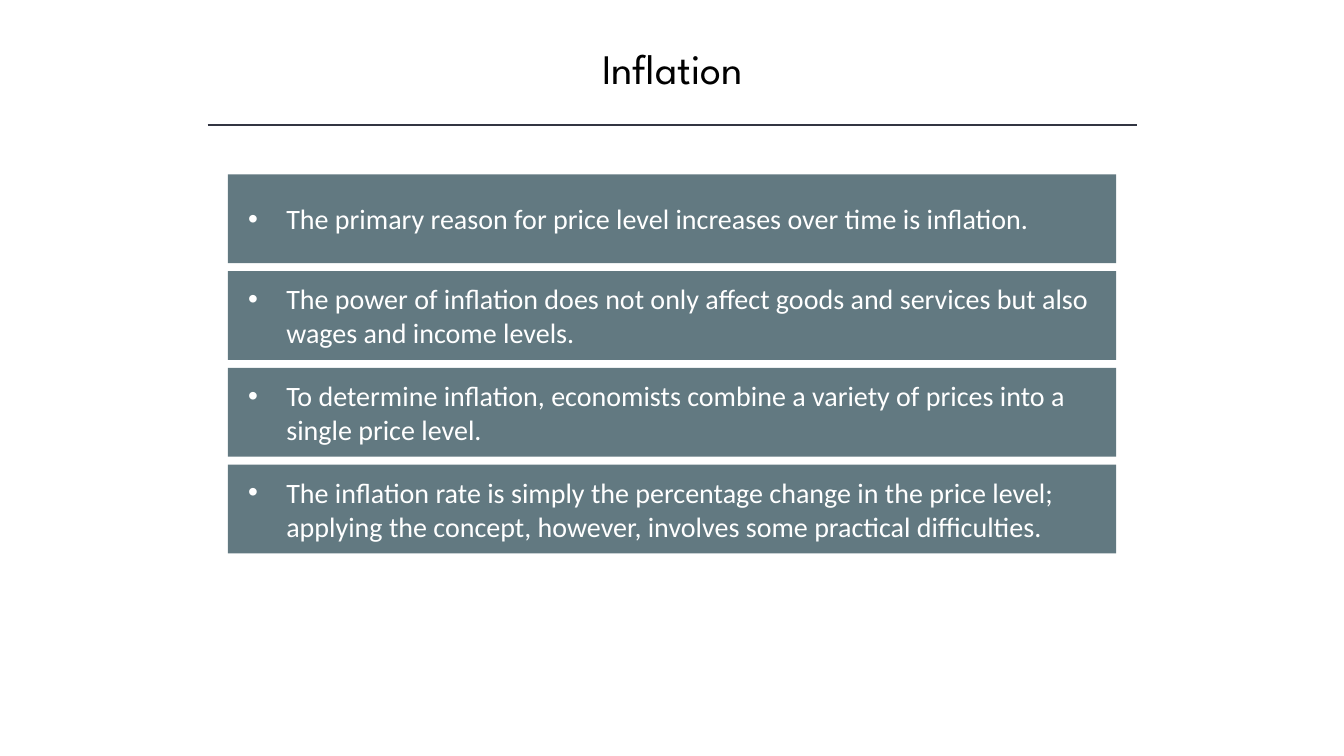
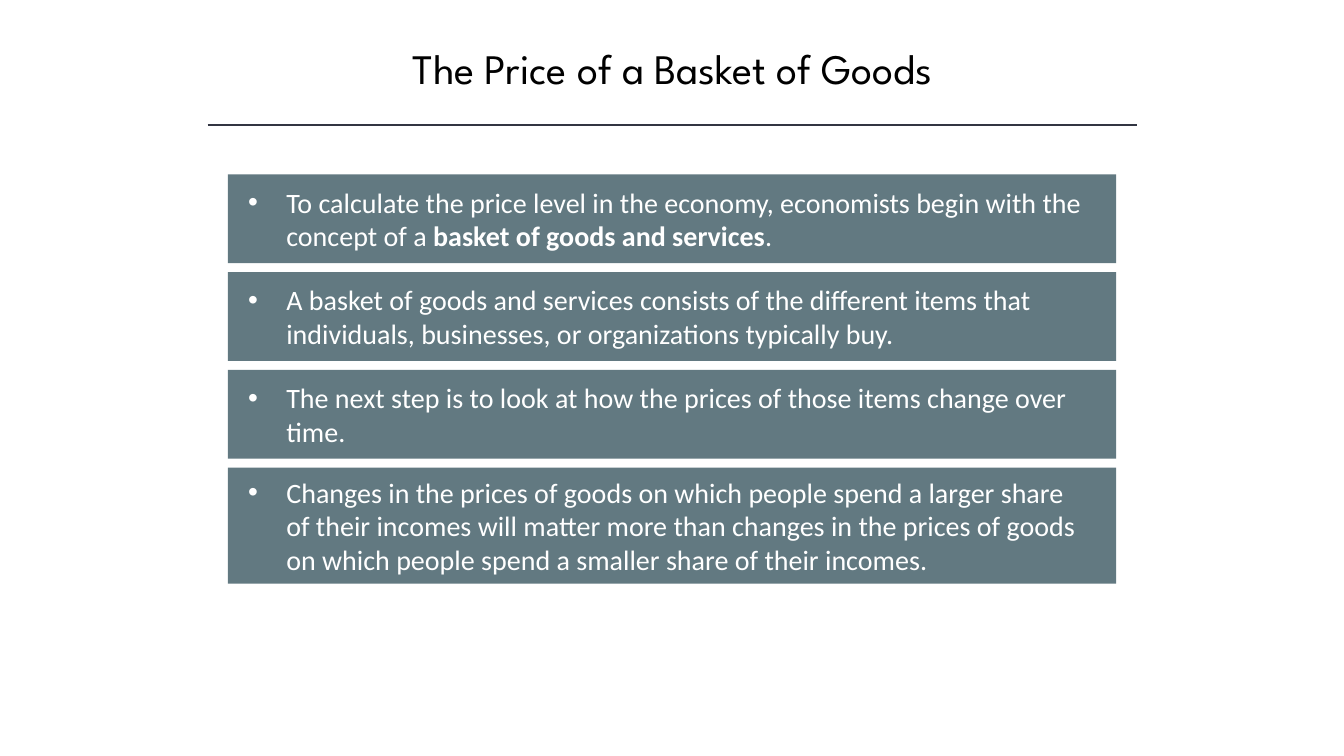
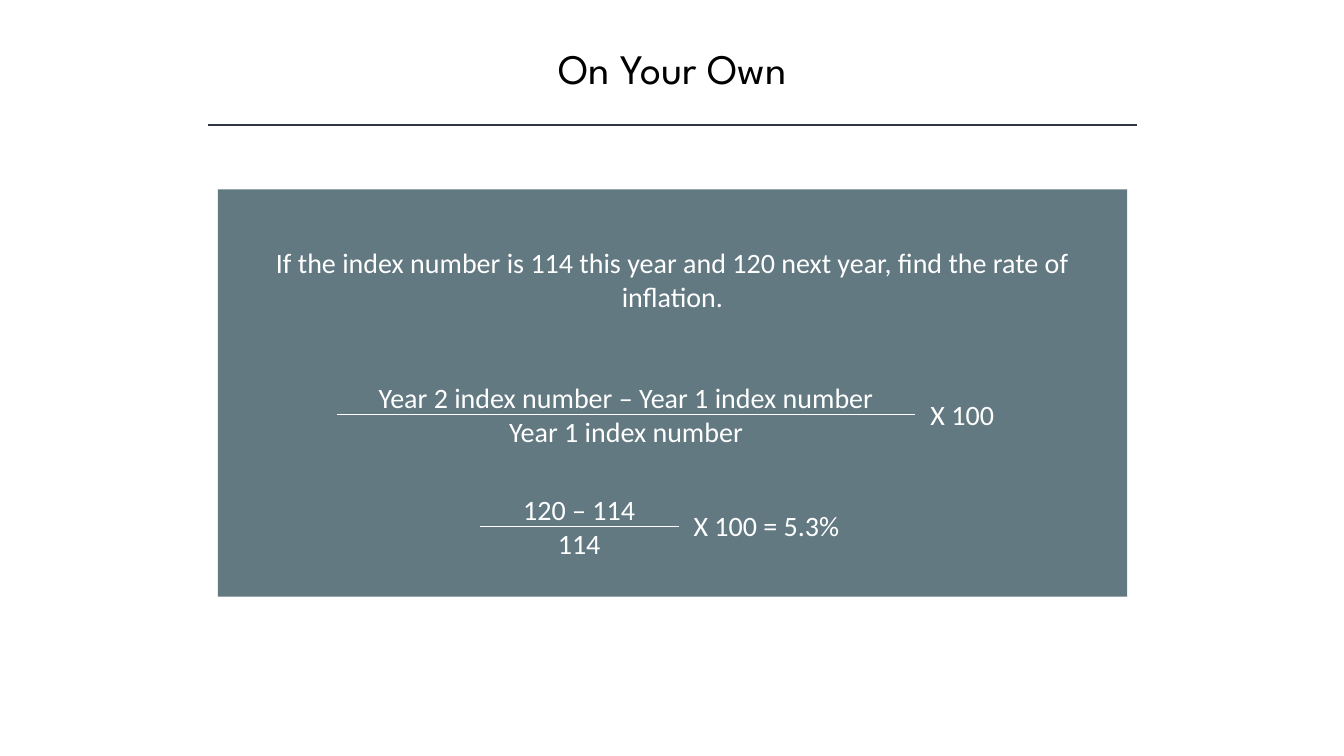
from lxml import etree
from pptx import Presentation
from pptx.dml.color import RGBColor
from pptx.enum.shapes import MSO_CONNECTOR as Connector, MSO_SHAPE as Shape
from pptx.enum.text import MSO_ANCHOR as Anchor, MSO_AUTO_SIZE as AutoSize, PP_ALIGN as Align
from pptx.oxml.ns import qn
from pptx.util import Inches, Pt

SLATE, INK, BLACK, WHITE = "627981", "323542", "000000", "FFFFFF"
TITLE_FONT = {"name": "League Spartan", "size": Pt(30), "bold": False}
BODY_FONT = {"name": "Calibri", "size": Pt(20), "bold": False}

INFLATION = [
    ["The primary reason for price level increases over time is inflation."],
    ["The power of inflation does not only affect goods and services but also "
     "wages and income levels."],
    ["To determine inflation, economists combine a variety of prices into a "
     "single price level."],
    ["The inflation rate is simply the percentage change in the price level; "
     "applying the concept, however, involves some practical difficulties."],
]
# Every second piece of a statement is bold
BASKET = [
    ["To calculate the price level in the economy, economists begin with the "
     "concept of a ", "basket of goods and services", "."],
    ["A basket of goods and services consists of the different items that "
     "individuals, businesses, or organizations typically buy."],
    ["The next step is to look at how the prices of those items change over time."],
    ["Changes in the prices of goods on which people spend a larger share of "
     "their incomes will matter more than changes in the prices of goods on "
     "which people spend a smaller share of their incomes."],
]


def rgb(value):
    return RGBColor.from_string(value)


def apply(target, values):
    for key, value in values.items():
        setattr(target, key, value)


class Deck:
    def __init__(self):
        self.prs = Presentation()
        self.prs.slide_width, self.prs.slide_height = Inches(13.33), Inches(7.5)
        self.slide = None

    def new_slide(self, heading):
        """Start a slide with its title and the rule below it."""
        self.slide = self.prs.slides.add_slide(self.prs.slide_layouts[5])
        title = self.slide.shapes.title
        apply(title, {"left": Inches(1.67), "top": Inches(0.37),
                      "width": Inches(10), "height": Inches(0.61)})
        apply(title.text_frame, {"auto_size": AutoSize.NONE, "word_wrap": True,
                                 "vertical_anchor": Anchor.TOP})
        self.add_runs(title.text_frame.paragraphs[0], [heading], TITLE_FONT, BLACK, Align.CENTER)
        self.rule(2.06, 11.28, 1.24, INK, 1)

    def add_runs(self, paragraph, pieces, font=BODY_FONT, color=WHITE, align=Align.LEFT):
        paragraph.alignment = align
        for index, piece in enumerate(pieces):
            run = paragraph.add_run()
            run.text = piece
            apply(run.font, font)
            run.font.color.rgb = rgb(color)
            if index % 2:
                run.font.bold = True

    def bullet(self, paragraph):
        props = paragraph._p.get_or_add_pPr()
        props.set("marL", str(Inches(0.38)))
        props.set("indent", str(-Inches(0.38)))
        etree.SubElement(props, qn("a:buFont")).set("typeface", "Arial")
        etree.SubElement(props, qn("a:buChar")).set("char", "•")

    def rule(self, start, end, y, color, weight):
        line = self.slide.shapes.add_connector(
            Connector.STRAIGHT, Inches(start), Inches(y), Inches(end), Inches(y))
        line.line.color.rgb = rgb(color)
        line.line.width = Pt(weight)
        etree.SubElement(line._element.spPr, qn("a:effectLst"))

    def panel(self, left, top, width, height):
        box = self.slide.shapes.add_shape(
            Shape.RECTANGLE, Inches(left), Inches(top), Inches(width), Inches(height))
        box.shadow.inherit = False
        box.fill.solid()
        box.fill.fore_color.rgb = rgb(SLATE)
        box.line.fill.background()
        return box

    def text(self, left, top, width, height, lines, align=Align.LEFT):
        frame = self.slide.shapes.add_textbox(
            Inches(left), Inches(top), Inches(width), Inches(height)).text_frame
        frame.word_wrap = True
        for index, line in enumerate(lines):
            paragraph = frame.add_paragraph() if index else frame.paragraphs[0]
            self.add_runs(paragraph, [line], align=align)

    def statements(self, statements, heights, gap):
        """Stack one bulleted band per statement."""
        top = 1.73
        for pieces, height in zip(statements, heights):
            frame = self.panel(2.26, top, 8.81, height).text_frame
            apply(frame, {"word_wrap": True, "vertical_anchor": Anchor.MIDDLE,
                          "margin_left": Inches(0.2), "margin_right": Inches(0.27),
                          "margin_top": 0, "margin_bottom": 0})
            self.add_runs(frame.paragraphs[0], pieces)
            self.bullet(frame.paragraphs[0])
            top += height + gap

    def fraction(self, left, top, width, numerator, denominator, factor, factor_width):
        """Numerator over denominator, with the factor right of the bar."""
        end = left + width
        self.text(left, top, width, 0.77, [numerator, denominator], Align.CENTER)
        self.text(end + 0.05, top + 0.16, factor_width, 0.44, [factor])
        self.rule(left, end, top + 0.38, WHITE, 0.5)


def main():
    deck = Deck()

    # Inflation
    deck.new_slide("Inflation")
    deck.statements(INFLATION, [0.88] * 4, 0.08)

    # Basket of goods
    deck.new_slide("The Price of a Basket of Goods")
    deck.statements(BASKET, [0.88] * 3 + [1.15], 0.09)

    # Exercise
    deck.new_slide("On Your Own")
    deck.panel(2.16, 1.88, 9.02, 4.04)
    deck.text(2.4, 2.39, 8.54, 0.77,
              ["If the index number is 114 this year and 120 next year, "
               "find the rate of inflation."], Align.CENTER)
    deck.fraction(3.34, 3.73, 5.74, "Year 2 index number – Year 1 index number",
                  "Year 1 index number", "X 100", 0.92)
    deck.fraction(4.76, 4.84, 1.97, "120 – 114", "114", "X 100 = 5.3%", 2.25)

    deck.prs.save("out.pptx")


if __name__ == "__main__":
    main()
